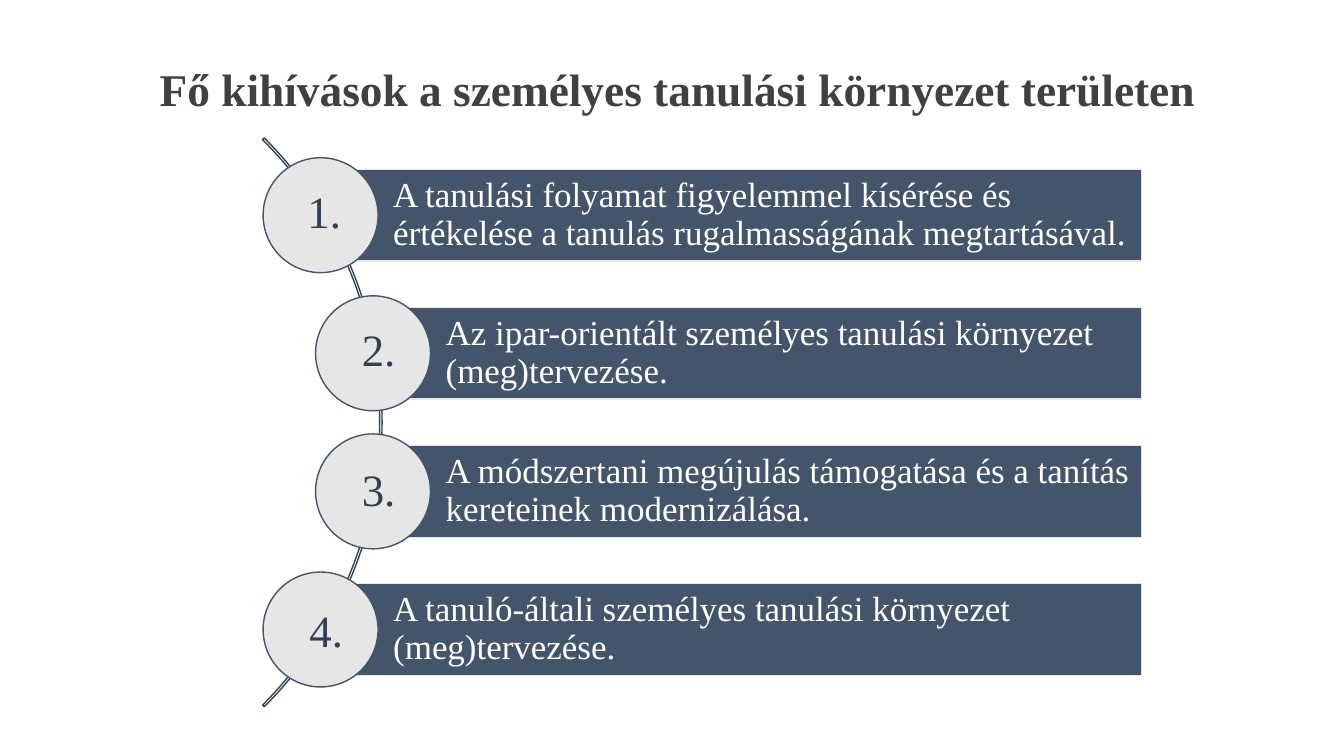
"""Builds a slide listing four numbered challenges along an arc."""
from dataclasses import dataclass

from pptx import Presentation
from pptx.dml.color import RGBColor
from pptx.enum.shapes import MSO_SHAPE as SHAPE
from pptx.enum.text import MSO_ANCHOR as ANCHOR, PP_ALIGN as ALIGN
from pptx.shapes.autoshape import Shape
from pptx.slide import Slide
from pptx.util import Inches, Pt

FONT = "Times New Roman"
NAVY, GREY, WHITE = "44546A", "E7E6E6", "FFFFFF"
ARC_LINE, NUMBER, TITLE = "364355", "333F50", "404040"
FIRST_TOP, STEP = 1.68, 1.37
BAR_RIGHT, BAR_HEIGHT = 11.32, 0.91
CIRCLE = 1.14


@dataclass
class Challenge:
    text: str
    left: float
    number_left: float
    number_top: float


CHALLENGES = [
    Challenge("A tanulási folyamat figyelemmel kísérése és értékelése a tanulás "
              "rugalmasságának megtartásával.", 3.18, 2.95, 1.77),
    Challenge("Az ipar-orientált személyes tanulási környezet (meg)tervezése.",
              3.7, 3.49, 3.14),
    Challenge("A módszertani megújulás támogatása és a tanítás kereteinek "
              "modernizálása.", 3.7, 3.49, 4.53),
    Challenge("A tanuló-általi személyes tanulási környezet (meg)tervezése.",
              3.18, 2.97, 5.93),
]


def rgb(value: str) -> RGBColor:
    return RGBColor.from_string(value)


def write(sp: Shape, text: str, *, size: float, color: str, bold: bool = False,
          align: ALIGN = ALIGN.LEFT, anchor: ANCHOR = ANCHOR.MIDDLE,
          spacing: float = 1.0,
          insets: tuple[float, float, float, float] = (0.1, 0.05, 0.1, 0.05)) -> None:
    tf = sp.text_frame
    tf.word_wrap = True
    tf.vertical_anchor = anchor
    tf.margin_left, tf.margin_top, tf.margin_right, tf.margin_bottom = map(Inches, insets)
    p = tf.paragraphs[0]
    p.alignment, p.line_spacing = align, spacing
    r = p.add_run()
    r.text = text
    r.font.name, r.font.size, r.font.bold = FONT, Pt(size), bold
    r.font.color.rgb = rgb(color)


def add_shape(s: Slide, kind: SHAPE, left: float, top: float, width: float,
              height: float, line: str, fill: str | None = None) -> Shape:
    sp = s.shapes.add_shape(kind, *map(Inches, (left, top, width, height)))
    sp.shadow.inherit = False
    if fill:
        sp.fill.solid()
        sp.fill.fore_color.rgb = rgb(fill)
    else:
        sp.fill.background()
    sp.line.color.rgb = rgb(line)
    sp.line.width = Pt(1)
    return sp


def add_title(s: Slide) -> None:
    sp = s.shapes.title
    sp.left, sp.top, sp.width, sp.height = map(Inches, (0.97, -0.1, 11.5, 1.45))
    write(sp, "Fő kihívások a személyes tanulási környezet területen", size=32.4,
          color=TITLE, bold=True, align=ALIGN.CENTER, anchor=ANCHOR.BOTTOM,
          spacing=0.9, insets=(0.1, 0.05, 0.1, 0.2))


def add_arc(s: Slide) -> None:
    arc = add_shape(s, SHAPE.BLOCK_ARC, -4.19, 0.2, 7.98, 7.98, ARC_LINE)
    for i, value in enumerate((189, 27, 0.003)):
        arc.adjustments[i] = value


def add_challenge(s: Slide, index: int, item: Challenge) -> None:
    top = FIRST_TOP + index * STEP
    bar = add_shape(s, SHAPE.RECTANGLE, item.left, top, BAR_RIGHT - item.left,
                    BAR_HEIGHT, GREY, NAVY)
    write(bar, item.text, size=25, color=WHITE, spacing=0.9,
          insets=(0.72, 0.07, 0.07, 0.07))
    add_shape(s, SHAPE.OVAL, item.left - CIRCLE / 2, top + (BAR_HEIGHT - CIRCLE) / 2,
              CIRCLE, CIRCLE, NAVY, GREY)
    number = s.shapes.add_textbox(*map(Inches, (item.number_left, item.number_top,
                                                0.65, 0.64)))
    write(number, f"{index + 1}.", size=32, color=NUMBER, anchor=ANCHOR.TOP)


def main() -> None:
    prs = Presentation()
    prs.slide_width, prs.slide_height = Inches(13.33), Inches(7.5)
    s = prs.slides.add_slide(prs.slide_layouts[5])
    add_title(s)
    add_arc(s)
    for index, item in enumerate(CHALLENGES):
        add_challenge(s, index, item)
    prs.save("out.pptx")


if __name__ == "__main__":
    main()
